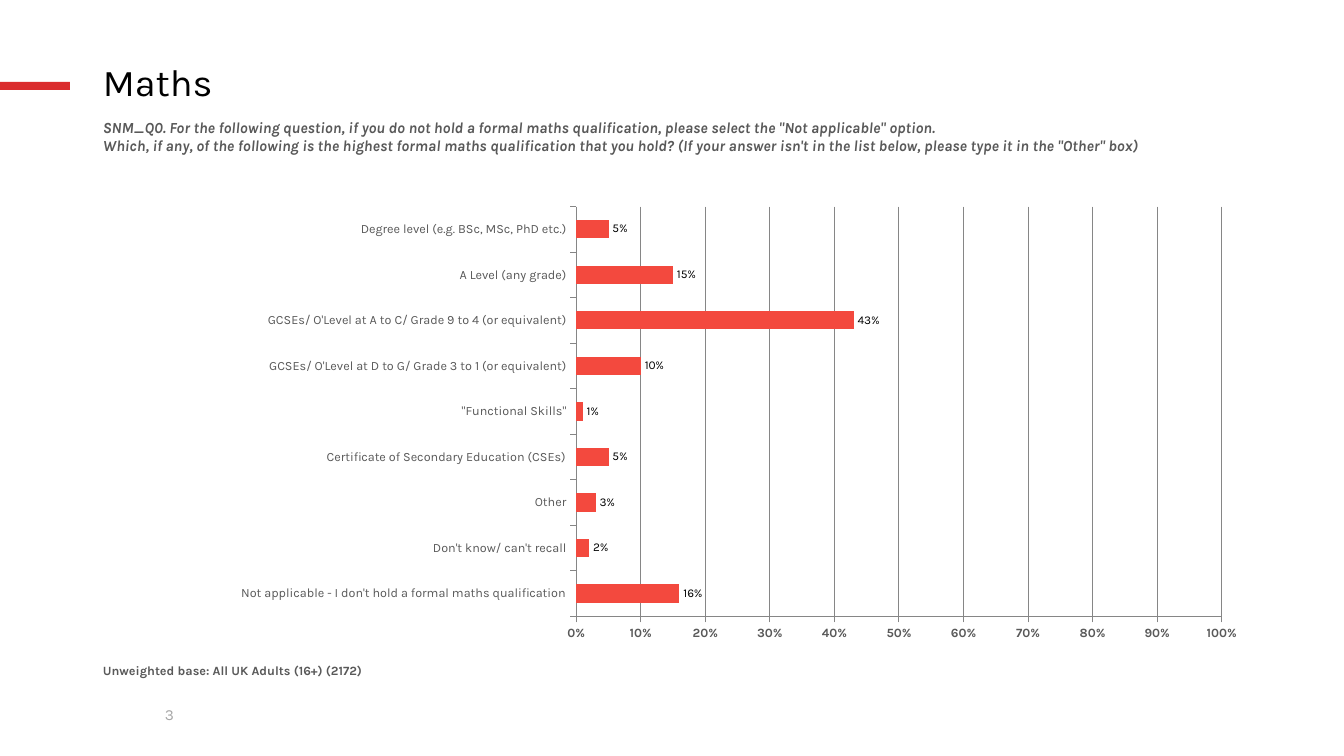
from dataclasses import dataclass

from lxml.etree import SubElement
from pptx import Presentation
from pptx.chart.data import CategoryChartData
from pptx.dml.color import RGBColor
from pptx.enum.chart import XL_CHART_TYPE, XL_LABEL_POSITION, XL_TICK_LABEL_POSITION, XL_TICK_MARK
from pptx.enum.shapes import MSO_SHAPE
from pptx.enum.text import MSO_ANCHOR
from pptx.oxml.ns import qn
from pptx.util import Emu, Pt

PX_PER_INCH = 100.8


@dataclass(frozen=True)
class Theme:
    font: str = "Karla"
    accent: str = "DA2C2D"
    bar: str = "F3493E"
    ink: str = "000000"
    body: str = "595959"
    muted: str = "A6A6A6"
    axis: str = "868686"
    title: float = 27
    text: float = 11
    small: float = 9
    label: float = 8.5


def px(n):
    return Emu(round(n * 914400 / PX_PER_INCH))


class Deck:
    """Builds slides from pixel positions and a shared theme."""

    def __init__(self, theme, width, height):
        self.t = theme
        self.prs = Presentation()
        self.prs.slide_width, self.prs.slide_height = px(width), px(height)
        self.s = None

    def slide(self):
        self.s = self.prs.slides.add_slide(self.prs.slide_layouts[6])

    def style(self, font, size, color, **fmt):
        for name, value in {"name": self.t.font, "size": Pt(size), **fmt}.items():
            setattr(font, name, value)
        font.color.rgb = RGBColor.from_string(color)

    def rect(self, box, color):
        sp = self.s.shapes.add_shape(MSO_SHAPE.RECTANGLE, *map(px, box))
        sp.shadow.inherit = False
        sp.fill.solid()
        sp.fill.fore_color.rgb = RGBColor.from_string(color)
        sp.line.fill.background()

    def text(self, box, lines, size, color, anchor=MSO_ANCHOR.TOP, spacing=1.0, **fmt):
        tf = self.s.shapes.add_textbox(*map(px, box)).text_frame
        tf.word_wrap = True
        tf.vertical_anchor = anchor
        for i, line in enumerate(lines):
            p = tf.paragraphs[0] if i == 0 else tf.add_paragraph()
            p.line_spacing = spacing
            r = p.add_run()
            r.text = line
            self.style(r.font, size, color, **fmt)

    def line(self, line):
        line.color.rgb = RGBColor.from_string(self.t.axis)
        line.width = Pt(0.75)

    def axis(self, axis, **fmt):
        axis.major_tick_mark = XL_TICK_MARK.OUTSIDE
        axis.minor_tick_mark = XL_TICK_MARK.NONE
        axis.tick_label_position = XL_TICK_LABEL_POSITION.LOW
        self.line(axis.format.line)
        self.style(axis.tick_labels.font, self.t.small, self.t.body, **fmt)

    def plot_area(self, chart, x, y, w, h):
        area = chart.plots[0]._element.getparent()
        for old in area.findall(qn("c:layout")):
            area.remove(old)
        layout = SubElement(area, qn("c:layout"))
        area.insert(0, layout)
        manual = SubElement(layout, qn("c:manualLayout"))
        values = {"layoutTarget": "inner", "xMode": "edge", "yMode": "edge",
                  "x": x, "y": y, "w": w, "h": h}
        for name, value in values.items():
            SubElement(manual, qn(f"c:{name}")).set("val", str(value))

    def bars(self, box, series_name, answers, plot):
        data = CategoryChartData(number_format="0%")
        data.categories = [name for name, _ in reversed(answers)]
        data.add_series(series_name, [share / 100 for _, share in reversed(answers)])
        chart = self.s.shapes.add_chart(XL_CHART_TYPE.BAR_CLUSTERED, *map(px, box), data).chart
        chart.has_legend = chart.has_title = False
        self.style(chart.font, self.t.small, self.t.ink)
        self.plot_area(chart, *plot)

        bars = chart.plots[0]
        for name, value in {"gap_width": 150, "overlap": -10,
                            "vary_by_categories": False, "has_data_labels": True}.items():
            setattr(bars, name, value)
        fill = bars.series[0].format.fill
        fill.solid()
        fill.fore_color.rgb = RGBColor.from_string(self.t.bar)
        for name, value in {"show_value": True, "number_format": "0%",
                            "number_format_is_linked": False,
                            "position": XL_LABEL_POSITION.OUTSIDE_END}.items():
            setattr(bars.data_labels, name, value)
        self.style(bars.data_labels.font, self.t.label, self.t.ink)

        self.axis(chart.category_axis, bold=False)
        value_axis = chart.value_axis
        self.axis(value_axis, bold=True)
        for name, value in {"minimum_scale": 0, "maximum_scale": 1, "major_unit": 0.1,
                            "has_major_gridlines": True}.items():
            setattr(value_axis, name, value)
        value_axis.tick_labels.number_format = "0%"
        value_axis.tick_labels.number_format_is_linked = False
        self.line(value_axis.major_gridlines.format.line)


ANSWERS = [
    ("Degree level (e.g. BSc, MSc, PhD etc.)", 5),
    ("A Level (any grade)", 15),
    ("GCSEs/ O'Level at A to C/ Grade 9 to 4 (or equivalent)", 43),
    ("GCSEs/ O'Level at D to G/ Grade 3 to 1 (or equivalent)", 10),
    ('"Functional Skills"', 1),
    ("Certificate of Secondary Education (CSEs)", 5),
    ("Other", 3),
    ("Don't know/ can't recall", 2),
    ("Not applicable - I don't hold a formal maths qualification", 16),
]
QUESTION = [
    "SNM_Q0. For the following question, if you do not hold a formal maths qualification, "
    'please select the "Not applicable" option.',
    "Which, if any, of the following is the highest formal maths qualification that you hold? "
    "(If your answer isn't in the list below, please type it in the \"Other\" box)",
]
LEFT, WIDTH = 93, 1159


def main():
    t = Theme()
    deck = Deck(t, 1344, 756)
    deck.slide()
    deck.rect((0, 82, 70, 8), t.accent)
    deck.text((155, 700, 69, 29), ["3"], t.text, t.muted)
    deck.text((LEFT, 59, WIDTH, 51), ["Maths"], t.title, t.ink, MSO_ANCHOR.MIDDLE, 0.9)
    deck.text((LEFT, 113, WIDTH, 67), QUESTION, t.text, t.body, bold=True, italic=True)
    deck.text((LEFT, 658, WIDTH, 43), ["Unweighted base: All UK Adults (16+) (2172)"],
              t.small, t.body, bold=True)
    deck.bars((LEFT, 191, WIDTH, 457), "Series 1", ANSWERS, (0.417, 0.034, 0.557, 0.897))
    deck.prs.save("out.pptx")


if __name__ == "__main__":
    main()
